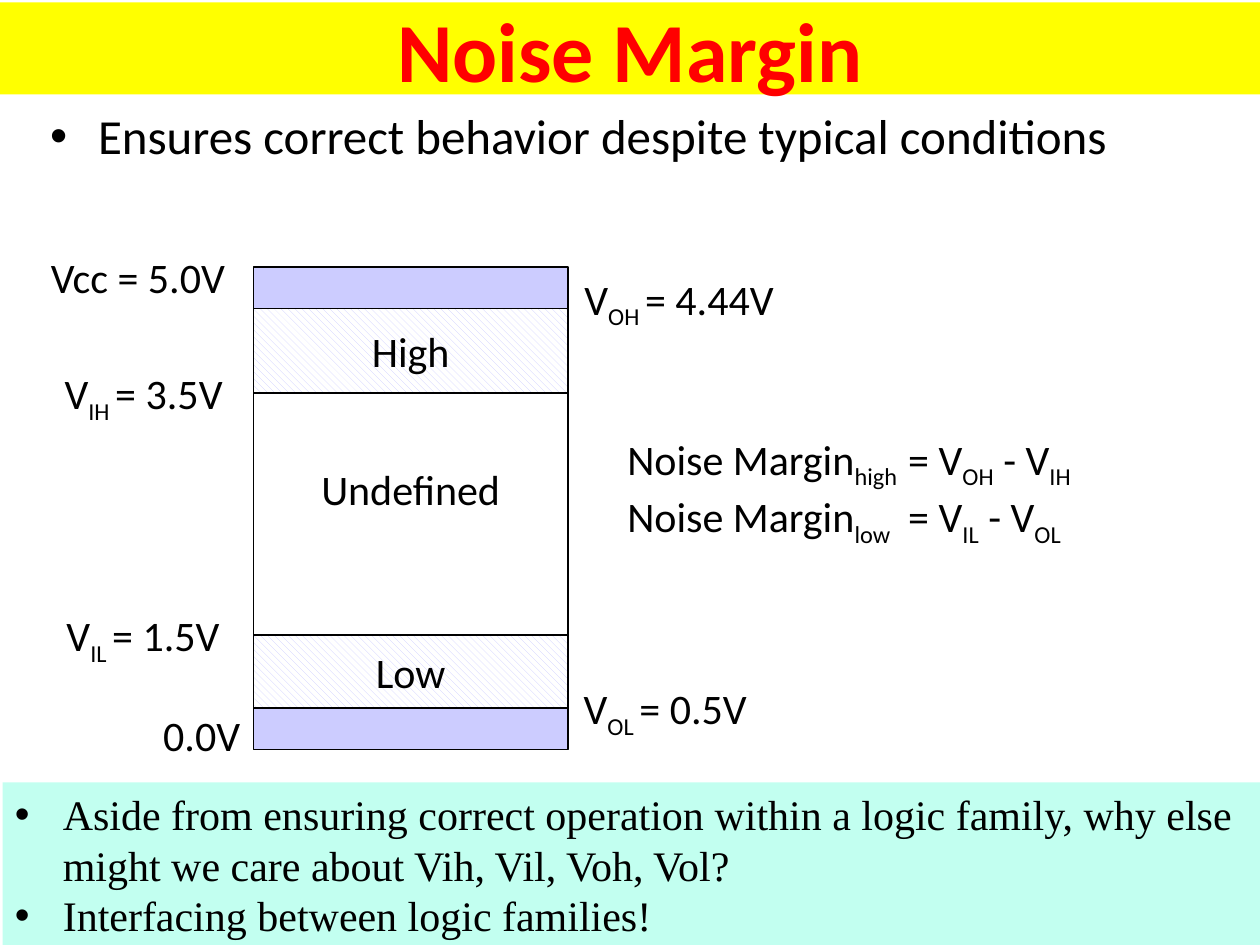
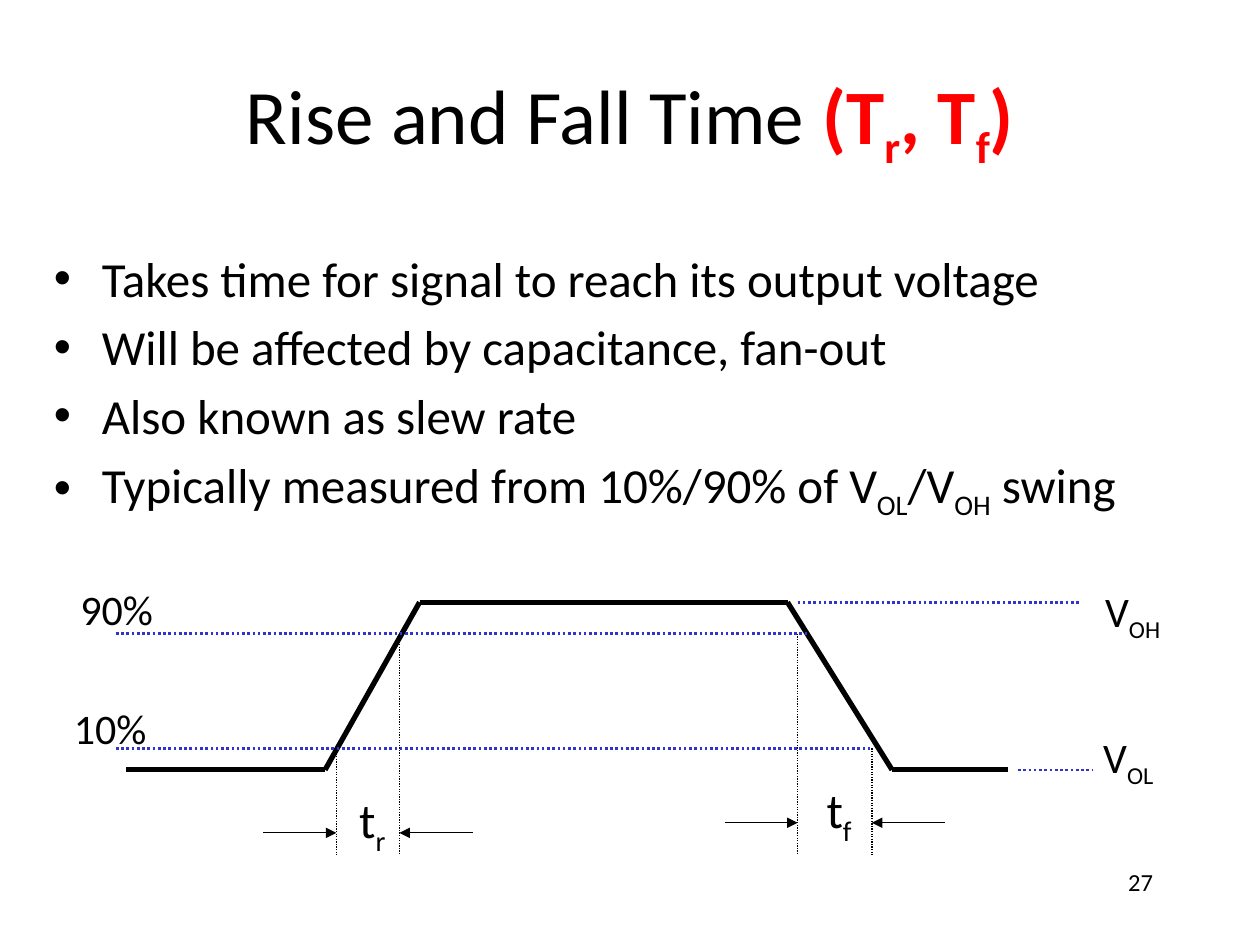
from itertools import pairwise

from lxml import etree
from pptx import Presentation
from pptx.dml.color import RGBColor
from pptx.enum import dml, shapes, text
from pptx.oxml.ns import qn
from pptx.util import Inches, Pt

BLACK = RGBColor(0x00, 0x00, 0x00)
WHITE = RGBColor(0xFF, 0xFF, 0xFF)
RED = RGBColor(0xFF, 0x00, 0x00)
YELLOW = RGBColor(0xFF, 0xFF, 0x00)
LAVENDER = RGBColor(0xCC, 0xCC, 0xFF)
MINT = RGBColor(0xC2, 0xFF, 0xF0)
BLUE = RGBColor(0x33, 0x33, 0xCC)

CENTER, RIGHT = text.PP_ALIGN.CENTER, text.PP_ALIGN.RIGHT
MIDDLE = text.MSO_ANCHOR.MIDDLE
HANG = Inches(0.38)


def add_runs(paragraph, markup, size=24, font="Calibri", color=BLACK, bold=False):
    """Add text to a paragraph; parts in [brackets] become subscripts."""
    for index, part in enumerate(markup.replace("]", "[").split("[")):
        if part:
            run = paragraph.add_run()
            run.text = part
            run.font.size, run.font.name, run.font.bold = Pt(size), font, bold
            run.font.color.rgb = color
            if index % 2:
                run.font._element.set("baseline", "-25000")


def write(frame, *lines, align=None, anchor=text.MSO_ANCHOR.TOP, wrap=False,
          bullets=False, gap=0, tab=None, **run_format):
    """Fill a text frame with one paragraph per line and return the last one."""
    frame.word_wrap, frame.vertical_anchor = wrap, anchor
    for index, line in enumerate(lines):
        paragraph = frame.add_paragraph() if index else frame.paragraphs[0]
        paragraph.alignment = align
        properties = paragraph._p.get_or_add_pPr()
        if bullets:
            properties.set("marL", str(HANG))
            properties.set("indent", str(-HANG))
            etree.SubElement(properties, qn("a:buFont")).set("typeface", "Arial")
            etree.SubElement(properties, qn("a:buChar")).set("char", "•")
        if tab:
            stops = etree.SubElement(properties, qn("a:tabLst"))
            etree.SubElement(stops, qn("a:tab"), pos=str(Inches(tab)), algn="l")
        if index and gap:
            paragraph.space_before = Pt(gap)
        add_runs(paragraph, line, **run_format)
    return paragraph


class Deck:
    """The presentation, its style and the slide being built."""

    def __init__(self):
        self.file = Presentation()
        self.file.slide_width, self.file.slide_height = Inches(10), Inches(7.5)

    def new_slide(self):
        self.slide = self.file.slides.add_slide(self.file.slide_layouts[6])

    def label(self, x, y, w, h, *lines, **style):
        box = self.slide.shapes.add_textbox(*map(Inches, (x, y, w, h)))
        return write(box.text_frame, *lines, **style)

    def title(self, x, y, w, h, line, **style):
        return self.label(x, y, w, h, line, align=CENTER, anchor=MIDDLE, wrap=True, **style)

    def body(self, x, y, *lines):
        self.label(x, y, 9.67, 4.5, *lines, size=28, bullets=True, gap=5.6, wrap=True)

    def block(self, x, y, w, h, fill, hatched=False, outlined=False):
        shape = self.slide.shapes.add_shape(
            shapes.MSO_SHAPE.RECTANGLE, *map(Inches, (x, y, w, h)))
        shape.shadow.inherit = False
        if hatched:
            shape.fill.patterned()
            shape.fill.pattern = dml.MSO_PATTERN.WIDE_DOWNWARD_DIAGONAL
            shape.fill.fore_color.rgb, shape.fill.back_color.rgb = fill, WHITE
        else:
            shape.fill.solid()
            shape.fill.fore_color.rgb = fill
        if outlined:
            shape.line.color.rgb, shape.line.width = BLACK, Pt(0.75)
        else:
            shape.line.fill.background()
        return shape.text_frame

    def line(self, start, end, width=0.75, color=BLACK, dotted=False, arrow=False):
        connector = self.slide.shapes.add_connector(
            shapes.MSO_CONNECTOR.STRAIGHT, *map(Inches, (*start, *end)))
        connector.line.color.rgb, connector.line.width = color, Pt(width)
        if dotted:
            connector.line.dash_style = dml.MSO_LINE.ROUND_DOT
        properties = connector._element.spPr
        if arrow:
            etree.SubElement(properties.find(qn("a:ln")), qn("a:tailEnd"), type="triangle")
        etree.SubElement(properties, qn("a:effectLst"))


def noise_margin(deck):
    deck.new_slide()
    deck.body(0.3, 0.79, "Ensures correct behavior despite typical conditions")

    # Title band
    deck.block(0, 0.02, 10, 0.73, YELLOW)
    deck.title(0, 0.02, 10, 0.73, "Noise Margin", size=48, color=RED, bold=True)

    # Voltage levels beside the column
    for x, y, w, level in (
            (1.19, 5.58, 0.82, "0.0V"),
            (0.3, 1.95, 1.59, "Vcc = 5.0V"),
            (0.39, 2.87, 1.5, "V[IH ]= 3.5V"),
            (0.41, 4.79, 1.45, "V[IL ]= 1.5V"),
            (4.51, 2.12, 1.76, "V[OH ]= 4.44V"),
            (4.51, 5.37, 1.54, "V[OL ]= 0.5V")):
        deck.label(x, y, w, 0.51, level, align=CENTER)

    # Column of logic ranges, from top to bottom
    left, width = 2.01, 2.5
    edges = (2.12, 2.45, 3.12, 5.04, 5.62, 5.95)
    ranges = (("", LAVENDER), ("High", LAVENDER), ("Undefined", WHITE),
              ("Low", LAVENDER), ("", LAVENDER))
    for (top, bottom), (name, fill) in zip(pairwise(edges), ranges):
        frame = deck.block(left, top, width, bottom - top, fill,
                           hatched=name in ("High", "Low"), outlined=True)
        if name:
            write(frame, name, align=CENTER, anchor=MIDDLE)
        if name == "Undefined":
            frame.margin_bottom = Inches(0.46)
    for threshold in edges[2:4]:
        deck.line((left, threshold), (left + width, threshold), width=1.5)

    # Formulas
    deck.label(4.88, 3.39, 3.85, 0.91,
               "Noise Margin[high]\t= V[OH] - V[IH]",
               "Noise Margin[low]\t= V[IL] - V[OL]", tab=2.23, wrap=True)

    # Closing question
    question = deck.block(0.02, 6.21, 9.98, 1.31, MINT)
    write(question,
          "Aside from ensuring correct operation within a logic family, "
          "why else might we care about Vih, Vil, Voh, Vol?",
          "Interfacing between logic families!",
          font="Times New Roman", bullets=True, wrap=True, align=text.PP_ALIGN.LEFT)


def rise_and_fall(deck):
    deck.new_slide()
    heading = deck.title(0.75, 0.33, 8.5, 1.25, "Rise and Fall Time ", size=44)
    add_runs(heading, "(T[r], T[f])", size=44, color=RED, bold=True)
    deck.body(0.33, 1.92,
              "Takes time for signal to reach its output voltage",
              "Will be affected by capacitance, fan-out",
              "Also known as slew rate",
              "Typically measured from 10%/90% of V[OL]/V[OH] swing")

    # Signal and its levels
    high, upper, lower, low = 4.78, 5.03, 5.94, 6.11
    signal = ((1, low), (2.58, low), (3.33, high), (6.25, high), (7.08, low), (8, low))
    for start, end in pairwise(signal):
        deck.line(start, end, width=3)
    for x1, x2, y in ((6.33, 8.58, high), (8.08, 8.67, low),
                      (0.92, 6.42, upper), (0.92, 6.92, lower)):
        deck.line((x1, y), (x2, y), width=1.5, color=BLUE, dotted=True)
    for x, y, w, level in ((8.64, 5.76, 0.63, "V[OL]"), (8.65, 4.6, 0.68, "V[OH]"),
                           (0.52, 4.58, 0.81, "90%"), (0.47, 5.53, 0.81, "10%")):
        deck.label(x, y, w, 0.5, level, align=CENTER)

    # Measured times: dotted limits with arrows pointing inwards
    reach = 0.58
    for begin, finish, begin_level, finish_level, y, name in (
            (2.67, 3.17, lower, upper, 6.61, "t[r]"),
            (6.33, 6.92, upper, lower, 6.53, "t[f]")):
        for x, level, outside in ((begin, begin_level, begin - reach),
                                  (finish, finish_level, finish + reach)):
            deck.line((x, level), (x, 6.78), dotted=True)
            deck.line((outside, y), (x, y), arrow=True)
        deck.label((begin + finish) / 2 - 0.18, y - 0.39, 0.43, 0.57, name,
                   size=28, align=CENTER)

    # Slide number
    deck.label(7.17, 6.83, 2.08, 0.5, "27", size=14, align=RIGHT, wrap=True)


def main():
    deck = Deck()
    noise_margin(deck)
    rise_and_fall(deck)
    deck.file.save("out.pptx")


if __name__ == "__main__":
    main()
